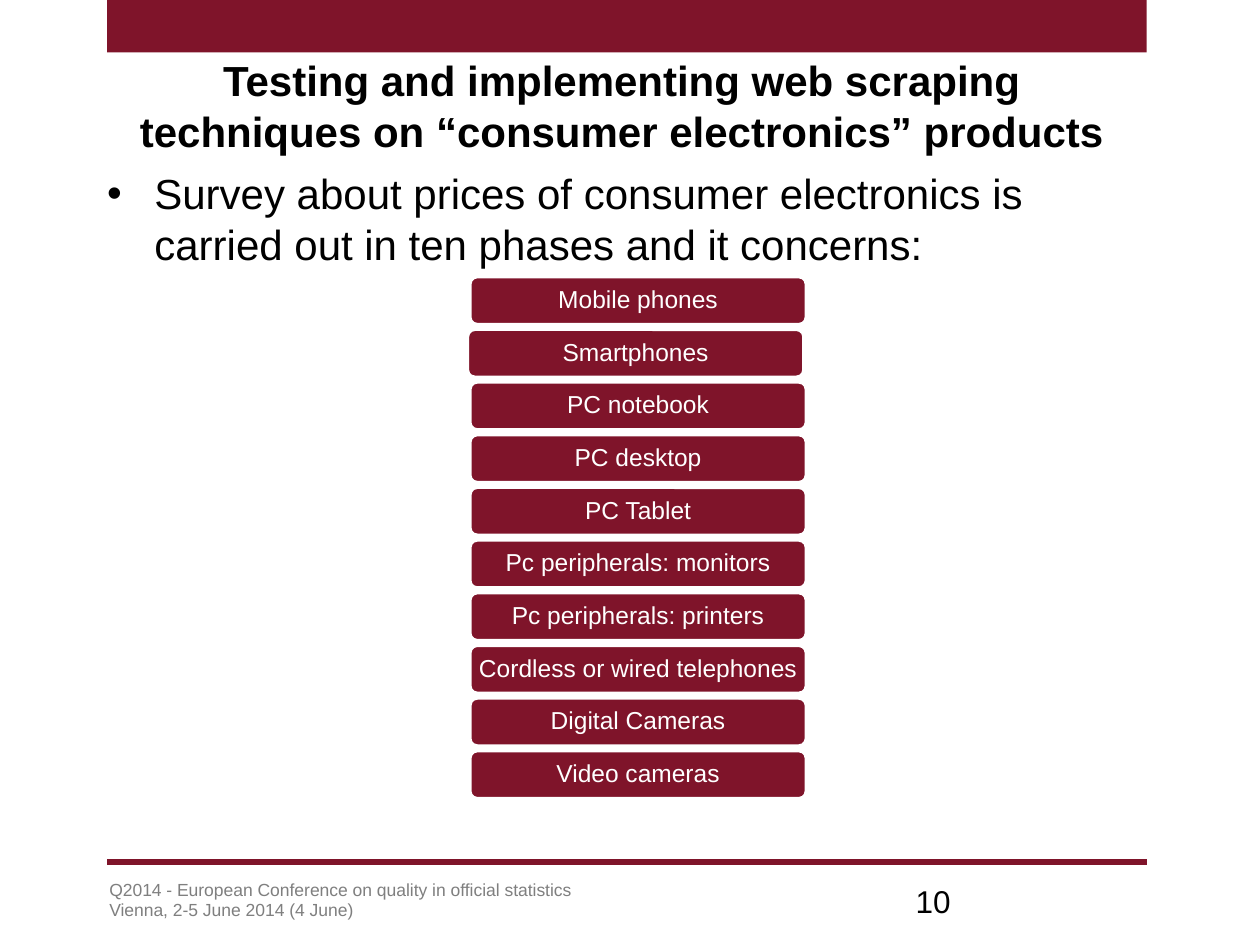
from pptx import Presentation
from pptx.dml.color import RGBColor
from pptx.enum.shapes import MSO_CONNECTOR as Connector, MSO_SHAPE as Shape
from pptx.enum.text import MSO_ANCHOR as Anchor, MSO_AUTO_SIZE as AutoSize, PP_ALIGN as Align
from pptx.oxml.ns import qn
from pptx.util import Pt
from lxml.etree import SubElement

COLORS = {"wine": "7F142A", "white": "FFFFFF", "black": "000000", "gray": "7F7F7F"}
PRODUCTS = [
    "Mobile phones", "Smartphones", "PC notebook", "PC desktop", "PC Tablet",
    "Pc peripherals: monitors", "Pc peripherals: printers",
    "Cordless or wired telephones", "Digital Cameras", "Video cameras",
]


class SlideBuilder:
    font_name = "Arial"
    line_width = 3.35

    def __init__(self, slide):
        self.slide = slide

    def color(self, name):
        return RGBColor.from_string(COLORS[name])

    def fill_text(self, shape, lines, size, color, bold=False, **paragraph_format):
        frame = shape.text_frame
        frame.word_wrap = True
        frame.auto_size = AutoSize.NONE
        frame.text = "\n".join(lines)
        for paragraph in frame.paragraphs:
            for name, value in paragraph_format.items():
                setattr(paragraph, name, value)
            font_format = {"name": self.font_name, "size": Pt(size), "bold": bold}
            for name, value in font_format.items():
                setattr(paragraph.font, name, value)
            paragraph.font.color.rgb = self.color(color)
        return frame

    def place(self, shape, left, top, width, height):
        box = {"left": left, "top": top, "width": width, "height": height}
        for name, value in box.items():
            setattr(shape, name, Pt(value))

    def title(self, box, text, size):
        shape = self.slide.shapes.title
        self.place(shape, *box)
        self.fill_text(shape, [text], size, "black", bold=True, alignment=Align.CENTER)

    def bullet(self, box, text, size, indent):
        shape = self.slide.placeholders[1]
        self.place(shape, *box)
        properties = shape.text_frame.paragraphs[0]._p.get_or_add_pPr()
        properties.set("marL", str(Pt(indent)))
        properties.set("indent", str(-Pt(indent)))
        SubElement(properties, qn("a:buChar")).set("char", "•")
        self.fill_text(shape, [text], size, "black", space_before=Pt(0))

    def text(self, box, lines, size, color):
        shape = self.slide.shapes.add_textbox(*map(Pt, box))
        return self.fill_text(shape, lines, size, color)

    def block(self, kind, box, outline=None):
        shape = self.slide.shapes.add_shape(kind, *map(Pt, box))
        shape.shadow.inherit = False
        shape.fill.solid()
        shape.fill.fore_color.rgb = self.color("wine")
        if outline:
            shape.line.color.rgb = self.color(outline)
            shape.line.width = Pt(self.line_width)
        else:
            shape.line.fill.background()
        return shape

    def label(self, box, text):
        shape = self.block(Shape.ROUNDED_RECTANGLE, box, outline="white")
        shape.adjustments[0] = 0.17
        frame = self.fill_text(shape, [text], 14, "white", alignment=Align.CENTER,
                               line_spacing=0.9)
        frame.vertical_anchor = Anchor.MIDDLE
        for side, inset in {"left": 4, "right": 4, "top": 2, "bottom": 2}.items():
            setattr(frame, f"margin_{side}", Pt(inset))

    def rule(self, left, right, top):
        line = self.slide.shapes.add_connector(
            Connector.STRAIGHT, Pt(left), Pt(top), Pt(right), Pt(top))
        line.line.color.rgb = self.color("wine")
        line.line.width = Pt(self.line_width)
        SubElement(line._element.spPr, qn("a:effectLst"))


def main():
    presentation = Presentation()
    presentation.slide_width, presentation.slide_height = Pt(720), Pt(540)
    slide = presentation.slides.add_slide(presentation.slide_layouts[1])
    builder = SlideBuilder(slide)

    # Top band, footer rule and footer
    builder.block(Shape.RECTANGLE, (61.2, 0, 594, 30))
    builder.rule(61.2, 655.2, 492.5)
    footer = builder.text((55.4, 501.8, 551.5, 28.1), [
        "Q2014 - European Conference on quality in official statistics",
        "Vienna, 2-5 June 2014 (4 June)",
    ], 10, "gray")
    footer.paragraphs[0].line_spacing = 0.7
    builder.text((516.2, 500.4, 167.8, 28.8), ["10"], 18, "black")

    # Title and introduction
    builder.title((54, 28.8, 602.6, 62.6),
                  "Testing and implementing web scraping techniques on "
                  "“consumer electronics” products", 24)
    builder.bullet((54, 92.2, 613.4, 71.3),
                   "Survey about prices of consumer electronics is carried out "
                   "in ten phases and it concerns:", 24, 27)

    # Product list, with the second label slightly to the left
    for index, product in enumerate(PRODUCTS):
        left = 266.4 if product == "Smartphones" else 267.8
        builder.label((left, 157.4 + index * 30.1, 193.7, 28.8), product)

    presentation.save("out.pptx")


if __name__ == "__main__":
    main()
